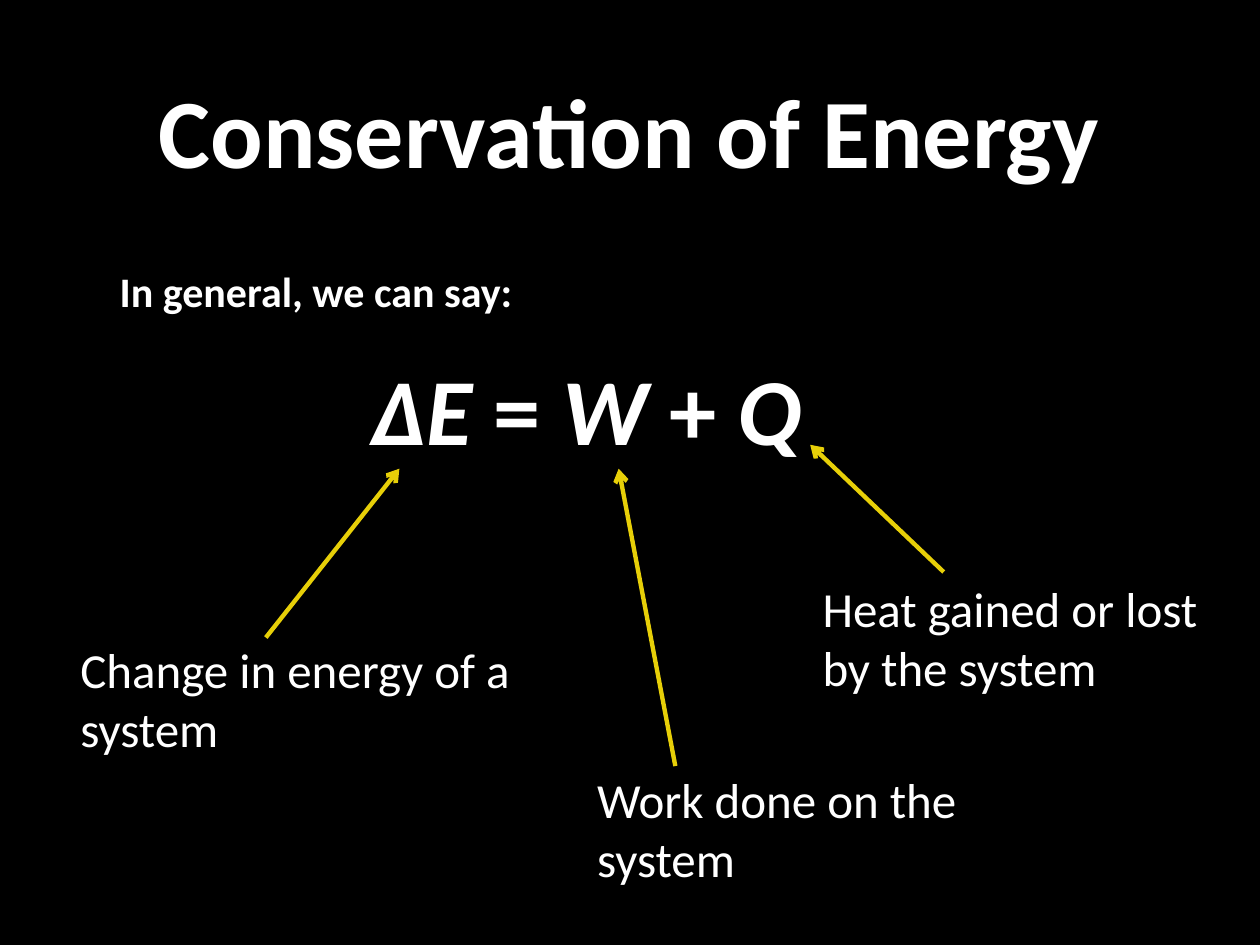
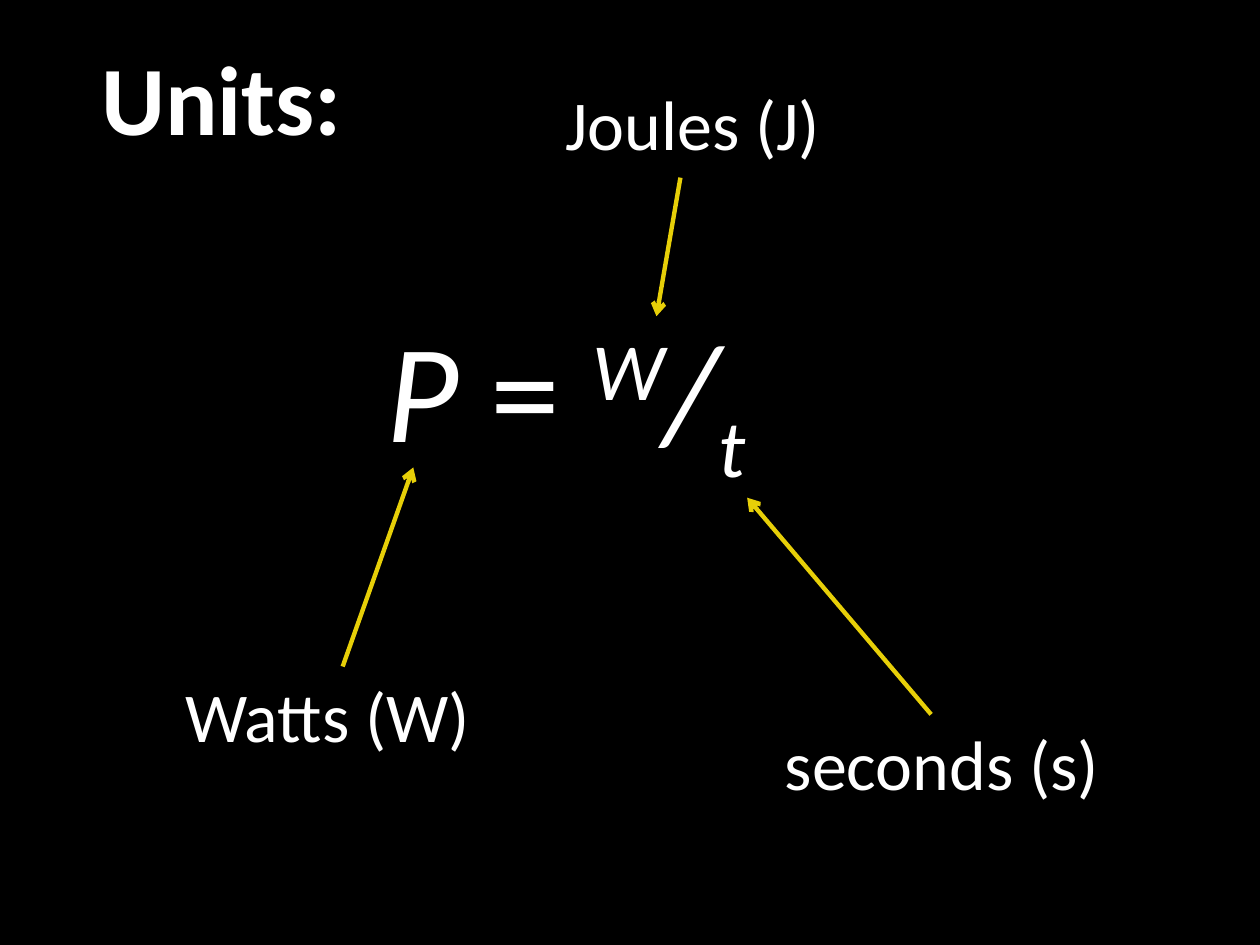
"""Build two slides that label the parts of the energy and power equations."""
import pptx
import pptx.dml.color
import pptx.enum.shapes
import pptx.enum.text
import pptx.util
from pptx.oxml.ns import qn
from lxml import etree

Inches = pptx.util.Inches
Pt = pptx.util.Pt

FONT = "Calibri"
BLACK, WHITE, YELLOW = "000000", "FFFFFF", "E7CF08"
SUPERSCRIPT, SUBSCRIPT = 30000, -25000

SLIDES = [
    {
        "title": ("Conservation of Energy", (0.85, 0.12, 8.29, 1.81)),
        "body_place": (0.85, 2.06, 8.29, 2.17),
        "body": [
            {"size": 24, "bold": True, "indent": 0,
             "spans": [("In general, we can say:", False, 0)]},
            {"size": 54, "bold": True, "indent": 2,
             "spans": [("ΔE", True, 0), (" = ", False, 0), ("W", True, 0),
                       (" + ", False, 0), ("Q", True, 0)]},
        ],
        "label_size": 28,
        "labels": [
            ("Change in energy of a system", (0.54, 5.03, 4.22, 1.04)),
            ("Work done on the system", (4.64, 6.06, 4.22, 1.04)),
            ("Heat gained or lost by the system", (6.43, 4.54, 3.57, 1.04)),
        ],
        "arrows": [
            (2.11, 5.06, 3.17, 3.72),
            (5.36, 6.08, 4.91, 3.72),
            (7.49, 4.54, 6.43, 3.53),
        ],
    },
    {
        "title": ("Units:", (0.55, 0.12, 2.42, 1.29)),
        "body_place": (2.97, 2.35, 7.03, 1.73),
        "body": [
            {"size": 80, "bold": False, "indent": 0,
             "spans": [("P", True, 0), (" = ", False, 0), ("W", True, SUPERSCRIPT),
                       ("/", True, 0), ("t", True, SUBSCRIPT)]},
        ],
        "label_size": 40,
        "labels": [
            ("Joules (J)", (4.39, 0.59, 4.22, 0.77)),
            ("seconds (s)", (6.13, 5.67, 3.09, 0.77)),
            ("Watts (W)", (1.37, 5.29, 4.22, 0.77)),
        ],
        "arrows": [
            (5.4, 1.41, 5.21, 2.51),
            (7.39, 5.67, 5.93, 3.95),
            (2.72, 5.29, 3.28, 3.71),
        ],
    },
]


def color(value):
    return pptx.dml.color.RGBColor.from_string(value)


def place(shape, bounds):
    shape.left, shape.top, shape.width, shape.height = map(Inches, bounds)
    shape.text_frame.word_wrap = True
    shape.text_frame.auto_size = pptx.enum.text.MSO_AUTO_SIZE.NONE


def style(para, size, bold=False):
    para.font.name = FONT
    para.font.size = Pt(size)
    para.font.bold = bold
    para.font.color.rgb = color(WHITE)


def fill_title(title, text, bounds):
    place(title, bounds)
    title.text_frame.vertical_anchor = pptx.enum.text.MSO_ANCHOR.MIDDLE
    para = title.text_frame.paragraphs[0]
    para.text = text
    para.alignment = pptx.enum.text.PP_ALIGN.CENTER
    style(para, 56, bold=True)


def fill_body(body, lines, bounds):
    place(body, bounds)
    frame = body.text_frame
    for number, line in enumerate(lines):
        para = frame.add_paragraph() if number else frame.paragraphs[0]
        para.space_before = Pt(20 if number else 0)
        properties = para._p.get_or_add_pPr()
        properties.set("marL", str(Inches(line["indent"])))
        properties.set("indent", "0")
        etree.SubElement(properties, qn("a:buNone"))
        style(para, line["size"], line["bold"])
        for text, italic, baseline in line["spans"]:
            span = para.add_run()
            span.text = text
            span.font.italic = italic
            if baseline:
                span._r.get_or_add_rPr().set("baseline", str(baseline))


def add_label(page, text, bounds, size):
    box = page.shapes.add_textbox(*map(Inches, bounds))
    box.text_frame.word_wrap = True
    para = box.text_frame.paragraphs[0]
    para.text = text
    style(para, size)


def add_arrow(page, ends):
    arrow = page.shapes.add_connector(
        pptx.enum.shapes.MSO_CONNECTOR.STRAIGHT, *map(Inches, ends))
    arrow.line.color.rgb = color(YELLOW)
    arrow.line.width = Pt(2.5)
    etree.SubElement(arrow.line._get_or_add_ln(), qn("a:tailEnd"), type="arrow")
    etree.SubElement(arrow._element.spPr, qn("a:effectLst"))


def main():
    deck = pptx.Presentation()
    deck.slide_width, deck.slide_height = Inches(10), Inches(7.5)
    background = deck.slide_master.background.fill
    background.solid()
    background.fore_color.rgb = color(BLACK)
    for content in SLIDES:
        page = deck.slides.add_slide(deck.slide_layouts[1])
        fill_title(page.shapes.title, *content["title"])
        fill_body(page.placeholders[1], content["body"], content["body_place"])
        for text, bounds in content["labels"]:
            add_label(page, text, bounds, content["label_size"])
        for ends in content["arrows"]:
            add_arrow(page, ends)
    deck.save("out.pptx")


if __name__ == "__main__":
    main()
